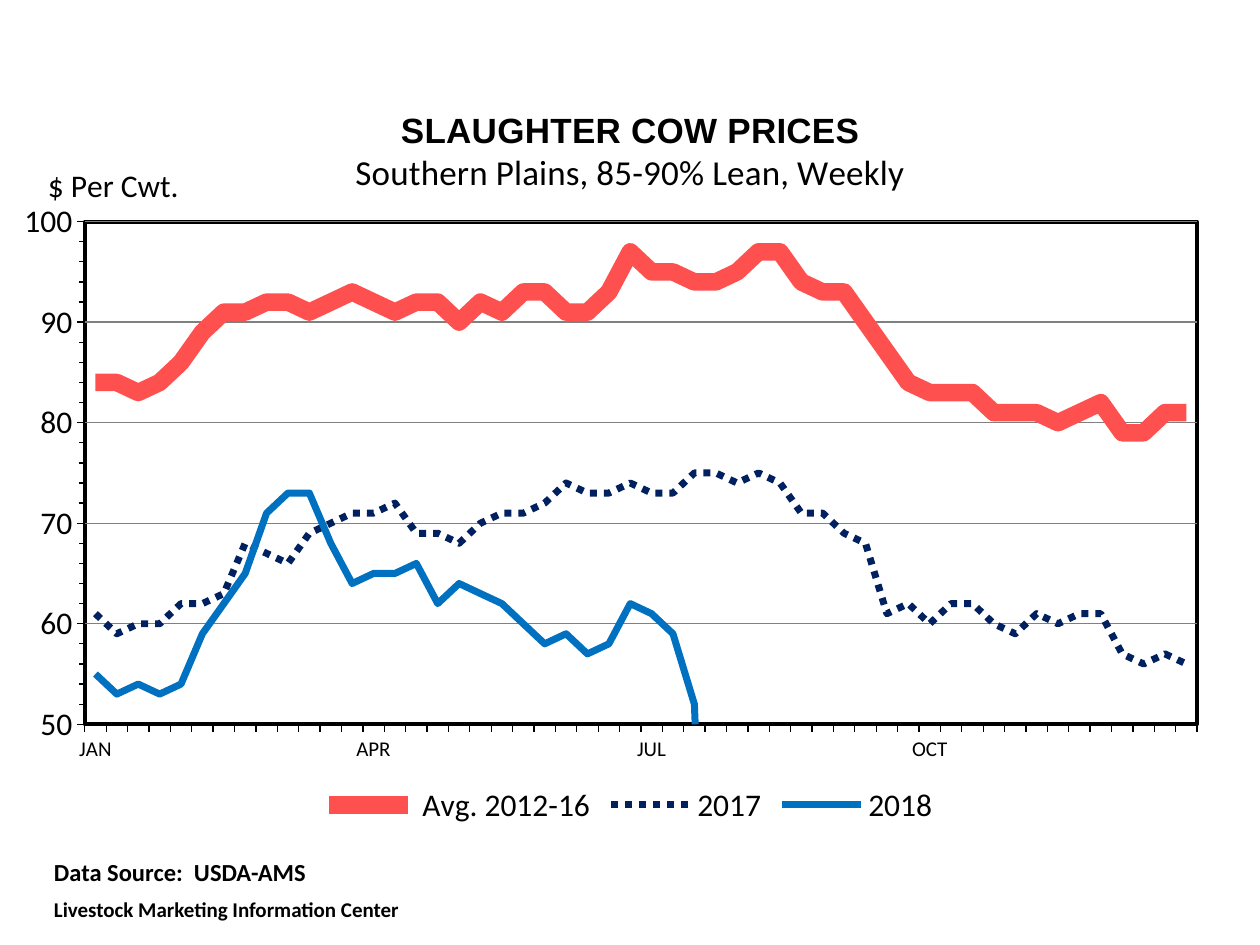
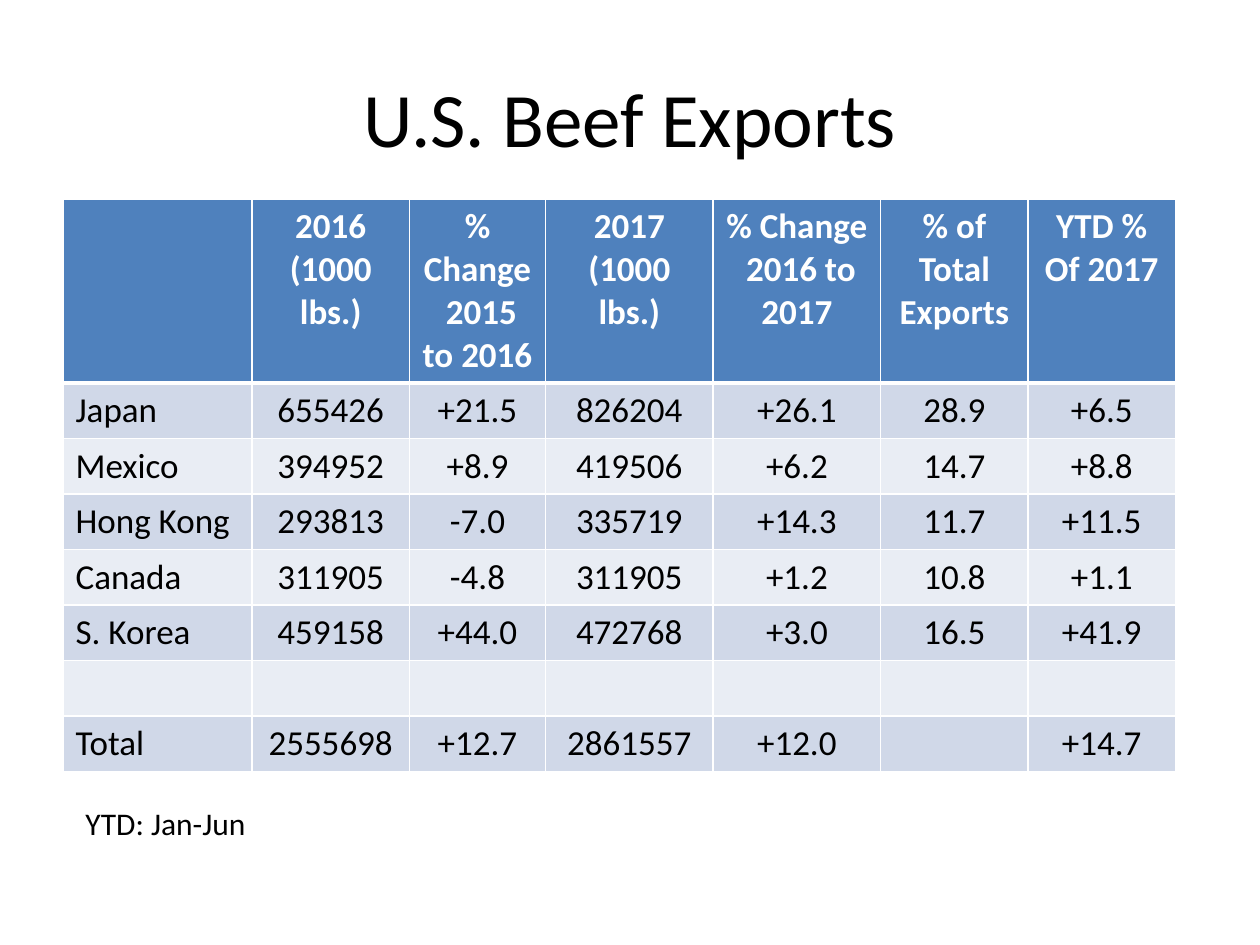
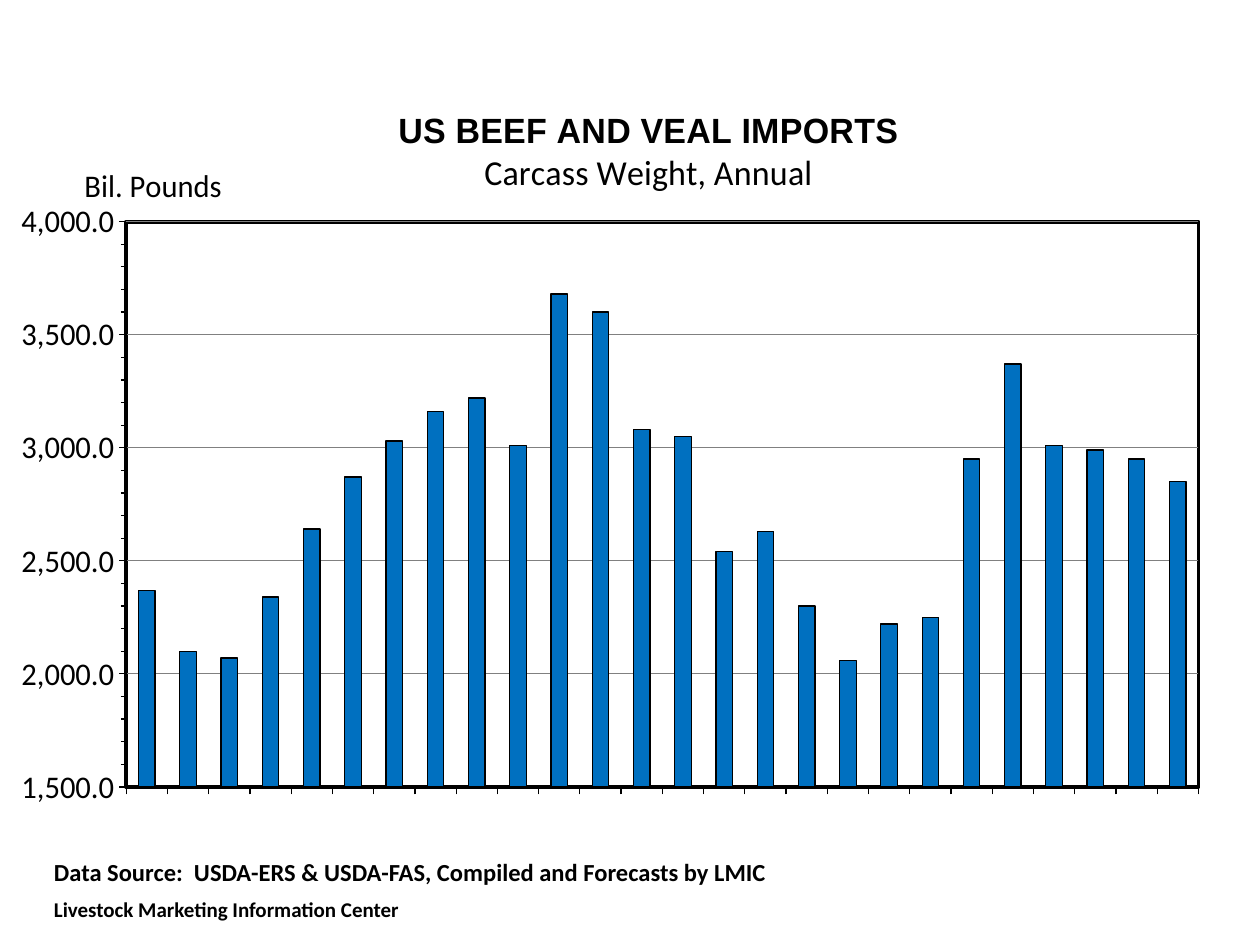
from dataclasses import dataclass

from lxml import etree
from pptx import Presentation
from pptx.chart.data import CategoryChartData
from pptx.dml.color import RGBColor
from pptx.enum.chart import XL_CHART_TYPE as ChartType
from pptx.enum.chart import XL_LEGEND_POSITION as LegendPosition
from pptx.enum.chart import XL_TICK_LABEL_POSITION as LabelPosition
from pptx.enum.chart import XL_TICK_MARK as TickMark
from pptx.enum.dml import MSO_LINE as Dash
from pptx.enum.text import MSO_ANCHOR, MSO_AUTO_SIZE
from pptx.enum.text import PP_ALIGN as Align
from pptx.oxml import parse_xml
from pptx.oxml.ns import nsdecls, qn
from pptx.util import Inches, Pt


@dataclass(frozen=True)
class Theme:
    body: str = "Calibri"
    heading: str = "Arial"
    ink: str = "000000"
    paper: str = "FFFFFF"
    grid: str = "808080"
    average: str = "FF5050"
    previous: str = "002060"
    current: str = "0070C0"
    header: str = "4F81BD"
    bands: tuple = ("D0D8E8", "E9EDF4")
    title: int = 44
    large: int = 20
    normal: int = 18
    source: int = 14
    small: int = 12
    hairline: float = 0.75
    frame: float = 2.25


THEME = Theme()
CENTER = "Livestock Marketing Information Center"
CHART_BOX = (0.17, 0.67, 9.67, 5.92)

WEEKS = 52
QUARTERS = {0: "JAN", 13: "APR", 26: "JUL", 39: "OCT"}
COW_PRICES = {
    "type": ChartType.LINE,
    "title": ("SLAUGHTER COW PRICES", "Southern Plains, 85-90% Lean, Weekly"),
    "title_at": (0.271, 0.028),
    "unit": "$ Per Cwt.",
    "unit_at": (0.017, 0.098),
    "plot": (0.052, 0.184, 0.913, 0.674),
    "scale": (50, 100, 10, 2),
    "format": "General",
    "categories": [QUARTERS.get(week, "") for week in range(WEEKS)],
    "series": [
        (" Avg. 2012-16",
         [84, 84, 83, 84, 86, 89, 91, 91, 92, 92, 91, 92, 93, 92, 91, 92, 92, 90,
          92, 91, 93, 93, 91, 91, 93, 97, 95, 95, 94, 94, 95, 97, 97, 94, 93, 93,
          90, 87, 84, 83, 83, 83, 81, 81, 81, 80, 81, 82, 79, 79, 81, 81]),
        ("2017",
         [61, 59, 60, 60, 62, 62, 63, 68, 67, 66, 69, 70, 71, 71, 72, 69, 69, 68,
          70, 71, 71, 72, 74, 73, 73, 74, 73, 73, 75, 75, 74, 75, 74, 71, 71, 69,
          68, 61, 62, 60, 62, 62, 60, 59, 61, 60, 61, 61, 57, 56, 57, 56]),
        ("2018",
         [55, 53, 54, 53, 54, 59, 62, 65, 71, 73, 73, 68, 64, 65, 65, 66, 62, 64,
          63, 62, 60, 58, 59, 57, 58, 62, 61, 59, 52] + [None] * 23),
    ],
    "source": "Data Source:  USDA-AMS",
    "source_width": 4.5,
}
PRICE_LINES = [(THEME.average, 10, None), (THEME.previous, 4, Dash.ROUND_DOT),
               (THEME.current, 4, None)]

BEEF_IMPORTS = {
    "type": ChartType.COLUMN_CLUSTERED,
    "title": ("US BEEF AND VEAL IMPORTS", "Carcass Weight, Annual"),
    "title_at": (0.285, 0.028),
    "unit": "Bil. Pounds",
    "unit_at": (0.018, 0.098),
    "plot": (0.058, 0.184, 0.907, 0.758),
    "scale": (1500, 4000, 500, 100),
    "format": "#,##0.0",
    "categories": [str(year) for year in range(1994, 2020)],
    "series": [
        ("Series 1",
         [2370, 2100, 2070, 2340, 2640, 2870, 3030, 3160, 3220, 3010, 3680, 3600,
          3080, 3050, 2540, 2630, 2300, 2060, 2220, 2250, 2950, 3370, 3010, 2990,
          2950, 2850]),
    ],
    "source": "Data Source:  USDA-ERS & USDA-FAS, Compiled and Forecasts by LMIC",
    "source_width": 6.17,
}

EXPORT_WIDTHS = [1.5, 1.25, 1.08, 1.33, 1.33, 1.17, 1.17]
HEADER_HEIGHT, ROW_HEIGHT = 1.45, 0.44
EXPORTS = [
    ["", "2016\n(1000 lbs.)", "% Change  2015 to 2016", "2017\n(1000 lbs.)",
     "% Change  2016 to 2017", "% of Total Exports", "YTD %\nOf 2017"],
    ["Japan", "655426", "+21.5", "826204", "+26.1", "28.9", "+6.5"],
    ["Mexico", "394952", "+8.9", "419506", "+6.2", "14.7", "+8.8"],
    ["Hong Kong", "293813", "-7.0", "335719", "+14.3", "11.7", "+11.5"],
    ["Canada", "311905", "-4.8", "311905", "+1.2", "10.8", "+1.1"],
    ["S. Korea", "459158", "+44.0", "472768", "+3.0", "16.5", "+41.9"],
    [""] * 7,
    ["Total", "2555698", "+12.7", "2861557", "+12.0", "", "+14.7"],
]


def rgb(color):
    return RGBColor.from_string(color)


def box(*lengths):
    return [Inches(length) for length in lengths]


def style(font, size=THEME.normal, name=THEME.body, color=THEME.ink, bold=False):
    font.size, font.name, font.bold = Pt(size), name, bold
    font.color.rgb = rgb(color)


def write(frame, text, align=None, before=None, add=False, **look):
    """Write each line of text as a paragraph; add keeps what is there."""
    for number, line in enumerate(text.split("\n")):
        paragraph = frame.add_paragraph() if add or number else frame.paragraphs[0]
        if align is not None:
            paragraph.alignment = align
        if before is not None:
            paragraph.space_before = Pt(before)
        run = paragraph.add_run()
        run.text = line
        style(run.font, **look)


def draw_line(line, color=THEME.ink, width=THEME.hairline):
    line.color.rgb = rgb(color)
    line.width = Pt(width)


def place(element, position, target=""):
    """Give a chart title or plot area a manual layout, as chart fractions."""
    for previous in element.findall(qn("c:layout")):
        element.remove(previous)
    layout = parse_xml(f'<c:layout {nsdecls("c")}><c:manualLayout/></c:layout>')
    settings = [("layoutTarget", target)] if target else []
    settings += [("xMode", "edge"), ("yMode", "edge"), *zip("xywh", position)]
    for tag, value in settings:
        etree.SubElement(layout[0], qn(f"c:{tag}")).set("val", str(value))
    text = element.find(qn("c:tx"))
    element.insert(0 if text is None else 1, layout)


def frame_plot(plot_area):
    plot_area.append(parse_xml(
        f'<c:spPr {nsdecls("c", "a")}>'
        f'<a:solidFill><a:srgbClr val="{THEME.paper}"/></a:solidFill>'
        f'<a:ln w="{Pt(THEME.frame)}"><a:solidFill>'
        f'<a:srgbClr val="{THEME.ink}"/></a:solidFill></a:ln></c:spPr>'))


def add_price_chart(slide, content):
    """Add the chart with its titles, axes and framed plot area."""
    data = CategoryChartData()
    data.categories = content["categories"]
    for name, values in content["series"]:
        data.add_series(name, values)
    chart = slide.shapes.add_chart(content["type"], *box(*CHART_BOX), data).chart
    # Category labels take the chart font, so that they stay on one line.
    style(chart.font, size=THEME.small)
    chart.has_legend = False
    chart.plots[0].vary_by_categories = False

    heading, subheading = content["title"]
    title = chart.chart_title
    write(title.text_frame, heading, size=THEME.large, name=THEME.heading, bold=True)
    write(title.text_frame, subheading, size=THEME.large, add=True)
    place(title._element, content["title_at"])

    values = chart.value_axis
    (values.minimum_scale, values.maximum_scale,
     values.major_unit, values.minor_unit) = content["scale"]
    values.minor_tick_mark = TickMark.OUTSIDE
    style(values.tick_labels.font)
    values.tick_labels.number_format = content["format"]
    values.tick_labels.number_format_is_linked = False
    values.has_major_gridlines = True
    draw_line(values.major_gridlines.format.line, THEME.grid)
    unit = values.axis_title
    write(unit.text_frame, content["unit"])
    body = unit.text_frame._txBody.find(qn("a:bodyPr"))
    body.set("rot", "0")
    body.set("vert", "horz")
    place(unit._element, content["unit_at"])

    for axis in (values, chart.category_axis):
        axis.major_tick_mark = TickMark.OUTSIDE
        draw_line(axis.format.line)

    plot_area = chart._chartSpace.xpath(".//c:plotArea")[0]
    place(plot_area, content["plot"], target="inner")
    frame_plot(plot_area)
    return chart


def add_note(slide, left, top, width, height):
    note = slide.shapes.add_textbox(*box(left, top, width, height)).text_frame
    note.word_wrap = True
    note.auto_size = MSO_AUTO_SIZE.SHAPE_TO_FIT_TEXT
    return note


def add_source(slide, content):
    note = add_note(slide, 0.33, 6.75, content["source_width"], 0.64)
    write(note, content["source"], size=THEME.source, bold=True)
    write(note, CENTER, size=THEME.small, bold=True, before=6, add=True)


def add_chart_slide(deck, content):
    slide = deck.slides.add_slide(deck.slide_layouts[6])
    chart = add_price_chart(slide, content)
    add_source(slide, content)
    return chart


def build_cow_prices(deck):
    chart = add_chart_slide(deck, COW_PRICES)
    for series, (color, width, dash) in zip(chart.plots[0].series, PRICE_LINES):
        series.smooth = False
        draw_line(series.format.line, color, width)
        if dash:
            series.format.line.dash_style = dash
    chart.has_legend = True
    chart.legend.position = LegendPosition.BOTTOM
    chart.legend.include_in_layout = False
    style(chart.legend.font)
    chart._chartSpace.xpath(".//c:dispBlanksAs")[0].set("val", "zero")
    skip = parse_xml(f'<c:tickLblSkip {nsdecls("c")} val="1"/>')
    category_axis = chart.category_axis._element
    category_axis.find(qn("c:noMultiLvlLbl")).addprevious(skip)


def build_imports(deck):
    chart = add_chart_slide(deck, BEEF_IMPORTS)
    chart.category_axis.tick_label_position = LabelPosition.NONE
    plot = chart.plots[0]
    plot.gap_width = 150
    bars = plot.series[0].format
    bars.fill.solid()
    bars.fill.fore_color.rgb = rgb(THEME.current)
    draw_line(bars.line)


def add_borders(cell, bottom):
    properties = cell._tc.get_or_add_tcPr()
    widths = {"lnL": 1, "lnR": 1, "lnT": 1, "lnB": bottom}
    for position, (side, width) in enumerate(widths.items()):
        properties.insert(position, parse_xml(
            f'<a:{side} {nsdecls("a")} w="{Pt(width)}"><a:solidFill>'
            f'<a:srgbClr val="{THEME.paper}"/></a:solidFill></a:{side}>'))


def build_exports(deck):
    slide = deck.slides.add_slide(deck.slide_layouts[5])
    title = slide.shapes.title
    title.left, title.top, title.width, title.height = box(0.5, 0.3, 9, 1.25)
    title.text_frame.vertical_anchor = MSO_ANCHOR.MIDDLE
    write(title.text_frame, "U.S. Beef Exports", size=THEME.title, align=Align.CENTER)

    heights = [HEADER_HEIGHT] + [ROW_HEIGHT] * (len(EXPORTS) - 1)
    table = slide.shapes.add_table(
        len(EXPORTS), len(EXPORT_WIDTHS),
        *box(0.5, 1.58, sum(EXPORT_WIDTHS), sum(heights))).table
    for column, width in zip(table.columns, EXPORT_WIDTHS):
        column.width = Inches(width)
    for r, (row, height) in enumerate(zip(EXPORTS, heights)):
        table.rows[r].height = Inches(height)
        header = r == 0
        for c, text in enumerate(row):
            cell = table.cell(r, c)
            cell.fill.solid()
            cell.fill.fore_color.rgb = rgb(
                THEME.header if header else THEME.bands[(r - 1) % 2])
            add_borders(cell, bottom=3 if header else 1)
            if text:
                write(cell.text_frame, text, size=THEME.large, bold=header,
                      color=THEME.paper if header else THEME.ink,
                      align=Align.CENTER if c else Align.LEFT)

    write(add_note(slide, 0.58, 6.33, 1.92, 0.4), "YTD: Jan-Jun")


def main():
    deck = Presentation()
    deck.slide_width, deck.slide_height = box(10, 7.5)
    build_cow_prices(deck)
    build_exports(deck)
    build_imports(deck)
    deck.save("out.pptx")


if __name__ == "__main__":
    main()
